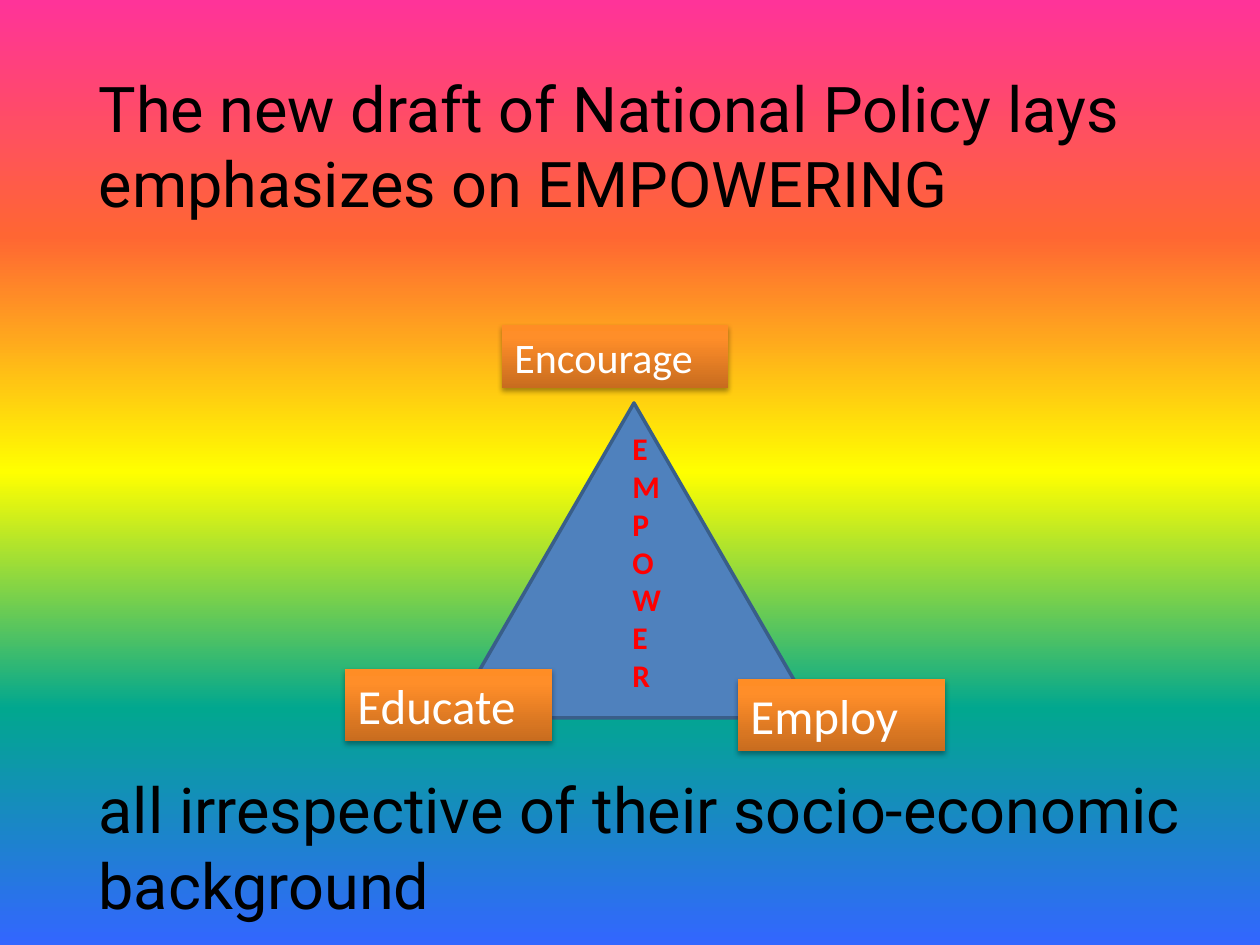
from dataclasses import dataclass

from lxml import etree
from pptx import Presentation
from pptx.dml.color import RGBColor
from pptx.enum.shapes import MSO_SHAPE
from pptx.enum.text import MSO_ANCHOR, MSO_AUTO_SIZE, PP_ALIGN
from pptx.oxml.ns import qn
from pptx.util import Emu, Pt

RECTANGLE = MSO_SHAPE.RECTANGLE
TRIANGLE = MSO_SHAPE.ISOSCELES_TRIANGLE
LEFT = PP_ALIGN.LEFT
TOP = MSO_ANCHOR.TOP
NO_AUTOFIT = MSO_AUTO_SIZE.NONE

EMU_PER_PX = 914400 / 126
TITLE_ONLY = 5


@dataclass(frozen=True)
class Theme:
    heading_font: str = "Roboto"
    label_font: str = "Calibri"
    heading_size: int = 36
    label_size: int = 28
    small_label_size: int = 24
    letter_size: int = 18
    heading: str = "000000"
    label: str = "FFFFFF"
    letter: str = "FF0000"
    triangle: str = "4F81BD"
    triangle_line: str = "395E89"
    shadow: str = "000000"
    rainbow: tuple = ((0, "FF3399"), (25, "FF6633"), (50, "FFFF00"),
                      (75, "01A78F"), (100, "3366FF"))
    orange: tuple = ((0, "C86C1F"), (80, "FF8E29"), (100, "FF8D25"))


def px(value):
    return Emu(round(value * EMU_PER_PX))


def rgb(color):
    return RGBColor.from_string(color)


class SlideBuilder:
    """Draws themed elements on one slide, with lengths in px."""

    def __init__(self, slide, theme):
        self.slide = slide
        self.theme = theme

    def gradient(self, fill, parent, stops, angle):
        """Fill with (percent, colour) stops; the angle runs counter-clockwise."""
        fill.gradient()
        fill.gradient_angle = angle
        stop_list = parent.find(".//" + qn("a:gsLst"))
        for stop in list(stop_list):
            stop_list.remove(stop)
        for percent, color in stops:
            stop = etree.SubElement(stop_list, qn("a:gs"), pos=str(percent * 1000))
            etree.SubElement(stop, qn("a:srgbClr"), val=color)

    def background(self):
        self.gradient(self.slide.background.fill, self.slide.element,
                      self.theme.rainbow, 270)

    def set_text(self, shape, lines, font_name, size, color, bold=False):
        frame = shape.text_frame
        frame.text = "\n".join(lines)
        frame.word_wrap = True
        frame.auto_size = NO_AUTOFIT
        frame.vertical_anchor = TOP
        for paragraph in frame.paragraphs:
            paragraph.alignment = LEFT
            for run in paragraph.runs:
                run.font.name = font_name
                run.font.size = Pt(size)
                run.font.bold = bold
                run.font.color.rgb = rgb(color)

    def title(self, lines, left, top, width, height, gap):
        """Set the title, with gap px between its paragraphs."""
        shape = self.slide.shapes.title
        shape.left, shape.top = px(left), px(top)
        shape.width, shape.height = px(width), px(height)
        self.set_text(shape, lines, self.theme.heading_font,
                      self.theme.heading_size, self.theme.heading)
        for paragraph in shape.text_frame.paragraphs[1:]:
            paragraph.space_before = px(gap)

    def triangle(self, left, top, width, height):
        shape = self.slide.shapes.add_shape(
            TRIANGLE, px(left), px(top), px(width), px(height))
        shape.shadow.inherit = False
        shape.fill.solid()
        shape.fill.fore_color.rgb = rgb(self.theme.triangle)
        shape.line.color.rgb = rgb(self.theme.triangle_line)
        shape.line.width = Pt(2)

    def label(self, text, left, top, width, height, size):
        shape = self.slide.shapes.add_shape(
            RECTANGLE, px(left), px(top), px(width), px(height))
        self.gradient(shape.fill, shape.element, self.theme.orange, 90)
        shape.line.fill.background()
        self.drop_shadow(shape)
        self.set_text(shape, [text], self.theme.label_font, size, self.theme.label)

    def drop_shadow(self, shape):
        shape.shadow.inherit = False
        effects = shape.element.spPr.find(qn("a:effectLst"))
        shadow = etree.SubElement(
            effects, qn("a:outerShdw"), blurRad=str(Pt(3.1)), dist=str(Pt(1.8)),
            dir="5400000", rotWithShape="0")
        color = etree.SubElement(shadow, qn("a:srgbClr"), val=self.theme.shadow)
        etree.SubElement(color, qn("a:alpha"), val="35000")

    def stacked_word(self, word, left, top, width, height):
        """Set a word downwards, one letter to a line."""
        shape = self.slide.shapes.add_textbox(
            px(left), px(top), px(width), px(height))
        self.set_text(shape, word, self.theme.label_font, self.theme.letter_size,
                      self.theme.letter, bold=True)


def main():
    presentation = Presentation()
    presentation.slide_width, presentation.slide_height = px(1260), px(945)
    slide = presentation.slides.add_slide(presentation.slide_layouts[TITLE_ONLY])
    theme = Theme()
    builder = SlideBuilder(slide, theme)

    builder.background()
    builder.title(
        ["The new draft of National Policy lays emphasizes on EMPOWERING",
         "all irrespective of their socio-economic background"],
        86, 63, 1123, 874, gap=550)
    builder.triangle(452, 403, 364, 315)
    builder.label("Encourage", 502, 325, 226, 63, theme.small_label_size)
    builder.label("Employ", 738, 679, 207, 72, theme.label_size)
    builder.label("Educate", 345, 669, 207, 72, theme.label_size)
    builder.stacked_word("EMPOWER", 620, 423, 98, 331)

    presentation.save("out.pptx")


if __name__ == "__main__":
    main()
